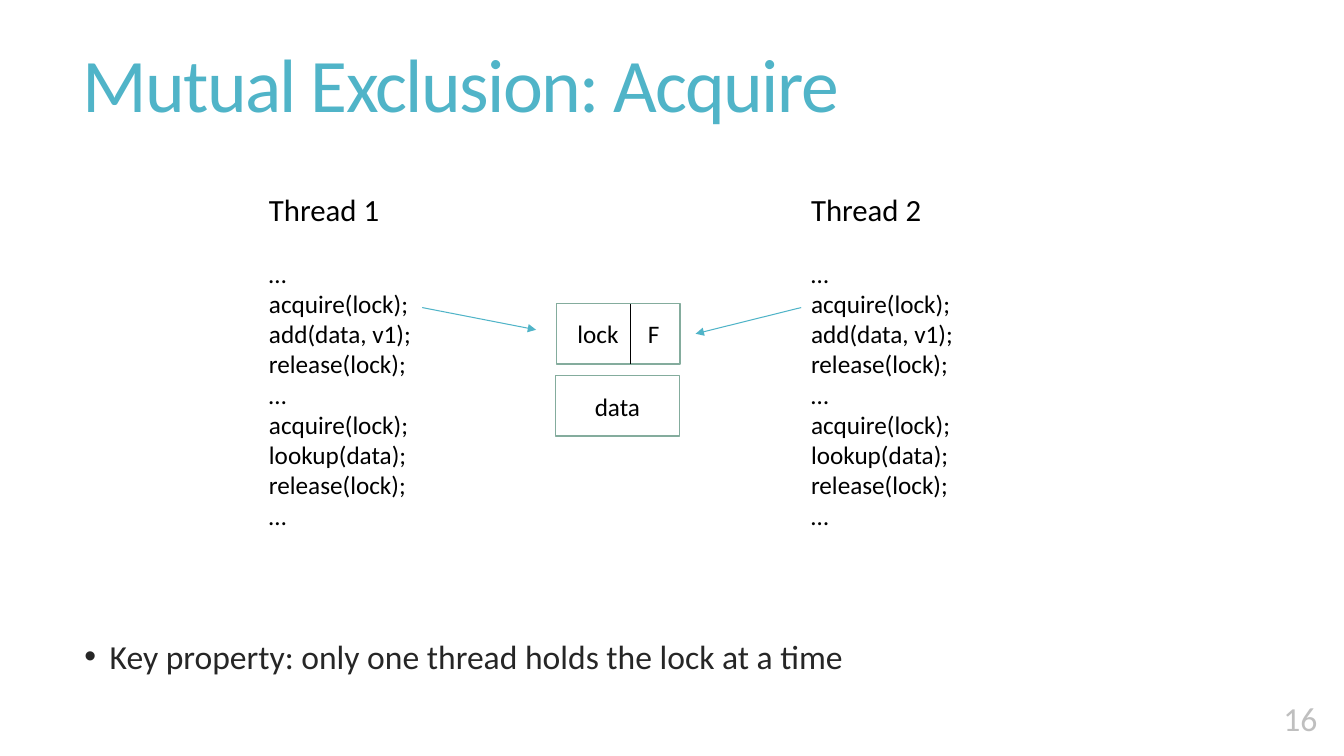
from lxml import etree
from pptx import Presentation
from pptx.dml.color import RGBColor
from pptx.enum.shapes import MSO_CONNECTOR, MSO_SHAPE
from pptx.enum.text import MSO_ANCHOR, PP_ALIGN
from pptx.oxml.ns import qn
from pptx.util import Cm, Pt

STRAIGHT = MSO_CONNECTOR.STRAIGHT
RECTANGLE = MSO_SHAPE.RECTANGLE
MIDDLE, BOTTOM = MSO_ANCHOR.MIDDLE, MSO_ANCHOR.BOTTOM
CENTER, RIGHT = PP_ALIGN.CENTER, PP_ALIGN.RIGHT
TEAL, GREEN, BLACK, WHITE = "50B4C8", "84AC9D", "000000", "FFFFFF"
DARK_GRAY, LIGHT_GRAY = "262626", "BFBFBF"
CODE = ["…", "acquire(lock);", "add(data, v1);", "release(lock);", "…",
        "acquire(lock);", "lookup(data);", "release(lock);", "…"]


def color(hex_string):
    return RGBColor.from_string(hex_string)


def write(para, text, size, hex_string):
    para.text = text
    para.font.name = "Calibri"
    para.font.size = Pt(size)
    para.font.color.rgb = color(hex_string)


deck = Presentation()
deck.slide_width, deck.slide_height = Cm(33.87), Cm(19.05)
page = deck.slides.add_slide(deck.slide_layouts[6])

# Title
title = page.shapes.add_textbox(Cm(1.83), Cm(-0.05), Cm(29.92), Cm(4.6)).text_frame
title.word_wrap = True
title.vertical_anchor = MIDDLE
para = title.paragraphs[0]
write(para, "Mutual Exclusion: Acquire", 54, TEAL)
para.line_spacing = 0.85
para.runs[0].font._element.set("spc", "-120")

# Key property bullet
body = page.shapes.add_textbox(Cm(1.88), Cm(15.9), Cm(29.87), Cm(1.4)).text_frame
body.word_wrap = True
para = body.paragraphs[0]
write(para, "Key property: only one thread holds the lock at a time", 24, DARK_GRAY)
properties = para._p.get_or_add_pPr()
properties.set("marL", str(Cm(0.635)))
properties.set("indent", str(Cm(-0.635)))
bullet = etree.Element(qn("a:buChar"), char="•")
properties.insert(0, bullet)
bullet.addprevious(etree.Element(qn("a:buFont"), typeface="Arial"))

# Slide number
number = page.shapes.add_textbox(Cm(27.76), Cm(16.99), Cm(5.69), Cm(1.75)).text_frame
number.word_wrap = True
number.vertical_anchor = BOTTOM
number.paragraphs[0].alignment = RIGHT
write(number.paragraphs[0], "16", 24, LIGHT_GRAY)

# Thread listings
for heading, left in [("Thread 1", 6.53), ("Thread 2", 20.19)]:
    thread = page.shapes.add_textbox(Cm(left), Cm(4.67), Cm(7.39), Cm(8.89)).text_frame
    thread.word_wrap = True
    write(thread.paragraphs[0], heading, 22, BLACK)
    for line in CODE:
        write(thread.add_paragraph(), line, 18, BLACK)
    thread.paragraphs[1].space_before = Pt(22)

# Shared lock and data
cells = {}
for label, left, top in [("data", 14.0, 9.47), ("lock\tF", 14.02, 7.65)]:
    cell = page.shapes.add_shape(RECTANGLE, Cm(left), Cm(top), Cm(3.12), Cm(1.52))
    cell.shadow.inherit = False
    cell.fill.solid()
    cell.fill.fore_color.rgb = color(WHITE)
    cell.line.color.rgb = color(GREEN)
    cell.line.width = Pt(1)
    cell.text_frame.vertical_anchor = MIDDLE
    para = cell.text_frame.paragraphs[0]
    write(para, label, 18, BLACK)
    para.alignment = CENTER
    cells[label] = cell

# The lock's state sits at a tab stop right of the divider
lock = cells["lock\tF"].text_frame
lock.margin_left, lock.margin_right = Cm(0.53), Cm(0)
para = lock.paragraphs[0]
para.alignment = PP_ALIGN.LEFT
tabs = etree.Element(qn("a:tabLst"))
etree.SubElement(tabs, qn("a:tab"), pos=str(Cm(1.78)), algn="l")
para._p.get_or_add_pPr().insert(0, tabs)

# Lock divider and the arrows from each acquire call
for x1, y1, x2, y2, stroke, has_arrow in [
    (15.9, 9.17, 15.9, 7.65, BLACK, False),
    (10.64, 7.75, 13.51, 8.31, TEAL, True),
    (20.19, 7.75, 17.53, 8.41, TEAL, True),
]:
    connector = page.shapes.add_connector(STRAIGHT, Cm(x1), Cm(y1), Cm(x2), Cm(y2))
    connector.line.color.rgb = color(stroke)
    connector.line.width = Pt(0.75)
    if has_arrow:
        etree.SubElement(connector.line._get_or_add_ln(), qn("a:tailEnd"), type="triangle")
    etree.SubElement(connector._element.spPr, qn("a:effectLst"))

deck.save("out.pptx")
